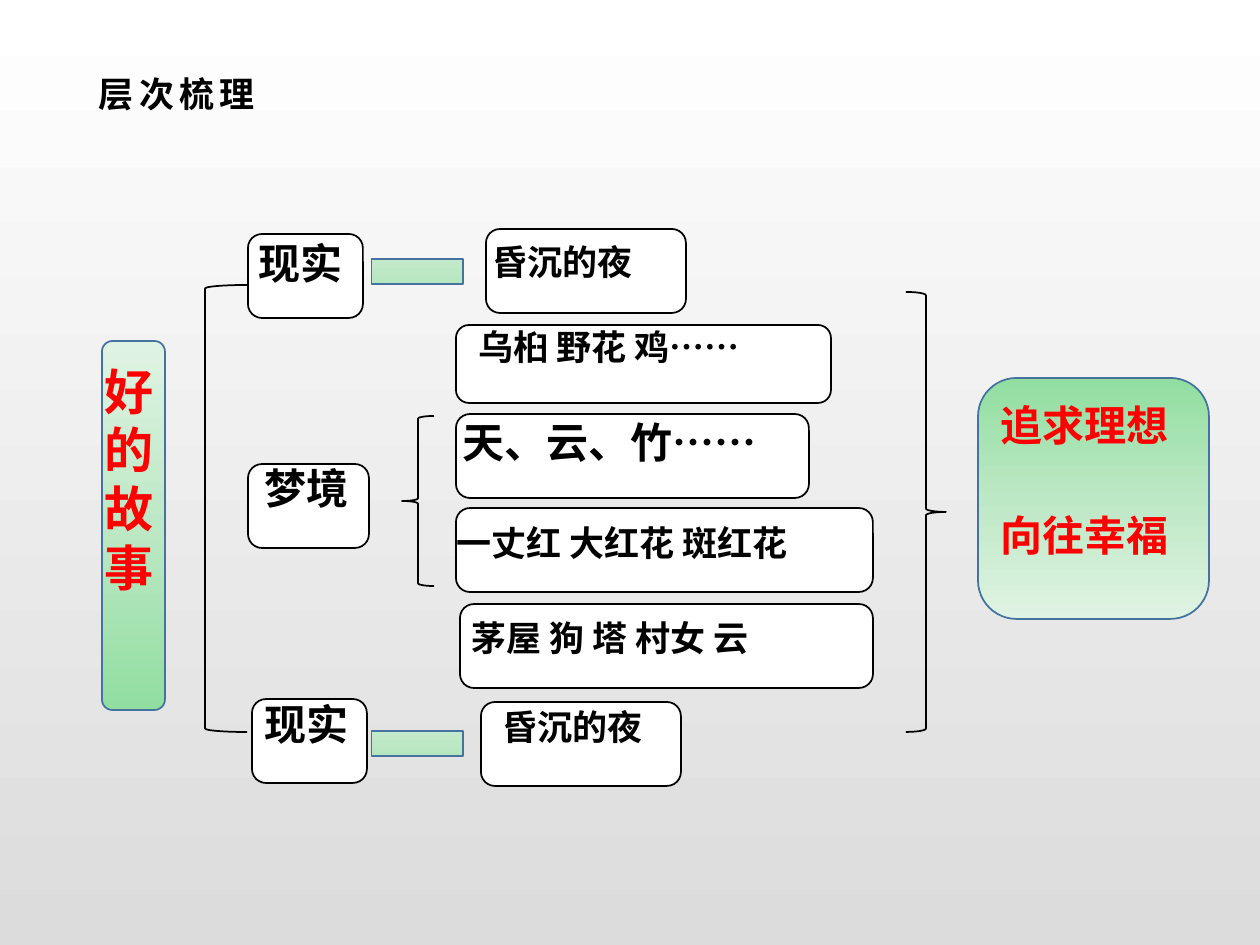
from copy import deepcopy

from lxml.etree import SubElement
from pptx import Presentation
from pptx.dml.color import RGBColor
from pptx.enum.shapes import MSO_SHAPE as SHAPE
from pptx.enum.text import MSO_AUTO_SIZE as AUTO_SIZE, PP_ALIGN as ALIGN
from pptx.oxml.ns import qn
from pptx.util import Emu, Pt

PX_PER_INCH = 126
FONT = "Noto Sans CJK SC"
COLORS = {
    "ink": "000000", "accent": "FF0000", "paper": "FFFFFF", "ground": "DCDCDC",
    "green": "91DEA0", "mid_green": "BDE8C5", "pale_green": "DFF3E3", "edge": "43739E",
}
GREENS = ("green", "mid_green", "pale_green")
DOWN, UP = 270, 90  # gradient directions, counter-clockwise degrees

# Each node: box, text place, text, size, whether the text wraps
NODES = [
    ((248, 234, 115, 84), (246, 231, 126, 63), "现实", 24, True),
    ((248, 464, 121, 84), (252, 456, 111, 63), "梦境", 24, False),
    ((252, 699, 115, 84), (252, 692, 111, 63), "现实", 24, False),
    ((486, 229, 200, 84), (480, 234, 168, 55), "昏沉的夜", 20, False),
    ((456, 325, 375, 78), (466, 319, 372, 55), "乌桕 野花 鸡……", 20, True),
    ((456, 414, 353, 84), (450, 410, 324, 63), "天、云、竹……", 24, False),
    ((456, 508, 417, 84), (444, 515, 527, 55), "一丈红 大红花 斑红花", 20, True),
    ((460, 604, 413, 84), (459, 610, 408, 55), "茅屋 狗 塔 村女 云", 20, True),
    ((481, 702, 200, 84), (490, 699, 168, 55), "昏沉的夜", 20, False),
]


def px(*lengths):
    return [Emu(round(length * 914400 / PX_PER_INCH)) for length in lengths]


def color(name):
    return RGBColor.from_string(COLORS[name])


def fill_gradient(fill, names, angle):
    fill.gradient()
    fill.gradient_angle = angle
    stop_list = fill._xPr.find(".//" + qn("a:gsLst"))
    while len(stop_list) < len(names):
        stop_list.append(deepcopy(stop_list[0]))
    for index, (stop, name) in enumerate(zip(fill.gradient_stops, names)):
        stop.color.rgb = color(name)
        stop.position = index / (len(names) - 1)


def add_outline(slide, kind, place, edge="ink"):
    shape = slide.shapes.add_shape(kind, *px(*place))
    shape.shadow.inherit = False
    shape.line.color.rgb = color(edge)
    shape.line.width = Pt(1)
    return shape


def add_box(slide, place):
    box = add_outline(slide, SHAPE.FLOWCHART_ALTERNATE_PROCESS, place)
    box.fill.solid()
    box.fill.fore_color.rgb = color("paper")


def add_green(slide, kind, place, angle):
    fill_gradient(add_outline(slide, kind, place, "edge").fill, GREENS, angle)


def add_bracket(slide, kind, place, flipped=False):
    bracket = add_outline(slide, kind, place)
    bracket.fill.background()
    if flipped:
        bracket._element.spPr.find(qn("a:xfrm")).set("flipH", "1")


def add_text(slide, place, lines, size, ink="ink", wrap=False, spacing=None, **paragraph_format):
    frame = slide.shapes.add_textbox(*px(*place)).text_frame
    frame.word_wrap = wrap
    frame.auto_size = AUTO_SIZE.SHAPE_TO_FIT_TEXT
    frame.text = "\n".join(lines)
    for paragraph in frame.paragraphs:
        for key, value in paragraph_format.items():
            setattr(paragraph, key, value)
        run = paragraph.runs[0]
        for key, value in {"size": Pt(size), "bold": True, "name": FONT}.items():
            setattr(run.font, key, value)
        run.font.color.rgb = color(ink)
        properties = run._r.get_or_add_rPr()
        SubElement(properties, qn("a:ea")).set("typeface", FONT)
        if spacing:
            properties.set("spc", str(spacing * 100))


def main():
    deck = Presentation()
    deck.slide_width, deck.slide_height = px(1260, 945)
    slide = deck.slides.add_slide(deck.slide_layouts[6])
    fill_gradient(slide.background.fill, ("paper", "ground"), DOWN)

    # Heading
    add_text(slide, (83, 66, 188, 55), ["层次梳理"], 20, spacing=3, alignment=ALIGN.CENTER)

    # Story title on the left
    add_green(slide, SHAPE.FLOWCHART_ALTERNATE_PROCESS, (102, 341, 63, 369), UP)
    add_text(slide, (92, 355, 76, 251), "好的故事", 28, "accent")

    # Brackets joining the levels
    add_bracket(slide, SHAPE.LEFT_BRACKET, (205, 285, 42, 447))
    add_bracket(slide, SHAPE.LEFT_BRACE, (402, 416, 32, 170))
    add_bracket(slide, SHAPE.LEFT_BRACE, (906, 292, 40, 440), flipped=True)

    # Reality and dream, with their scenes
    for box, text_place, text, size, wrap in NODES:
        add_box(slide, box)
        add_text(slide, text_place, [text], size, wrap=wrap)

    # Bars between reality and the night
    for top in (218, 690):
        add_green(slide, SHAPE.MATH_MINUS, (355, top, 125, 107), UP)

    # Theme on the right
    add_green(slide, SHAPE.FLOWCHART_ALTERNATE_PROCESS, (978, 378, 231, 241), DOWN)
    for top, theme in ((339, "追求理想"), (449, "向往幸福")):
        add_text(slide, (988, top, 197, 118), [theme], 24, "accent", line_spacing=Pt(60))

    deck.save("out.pptx")


if __name__ == "__main__":
    main()
